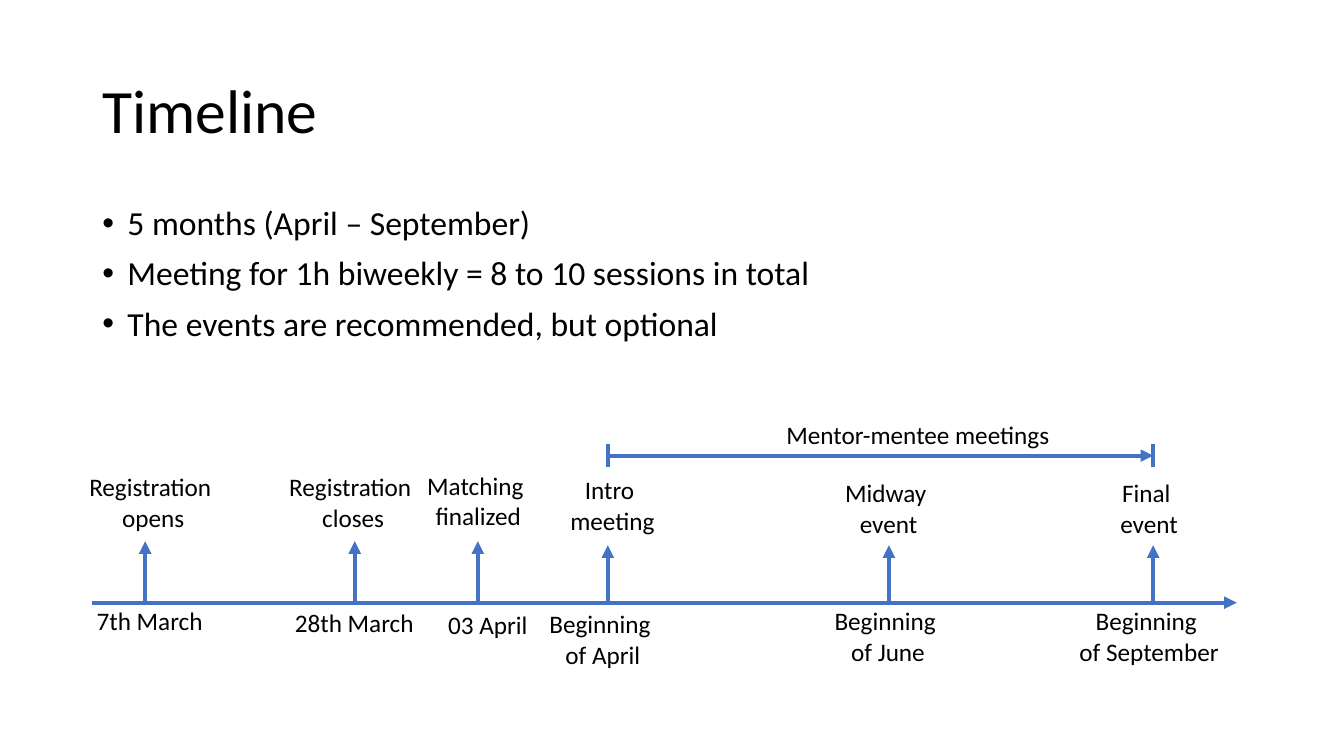
from collections import namedtuple
from lxml import etree
from pptx import Presentation
from pptx import util as u
from pptx.dml.color import RGBColor
from pptx.enum import shapes, text
from pptx.oxml import ns

BLUE = RGBColor(0x44, 0x72, 0xC4)
BLACK = RGBColor(0, 0, 0)
Pt = u.Pt

AXIS_Y = 430.5
SPAN_Y = 325.5
LINE_H = 22
BULLETS = [
    "5 months (April – September)",
    "Meeting for 1h biweekly = 8 to 10 sessions in total",
    "The events are recommended, but optional",
]
Label = namedtuple("Label", "content centre top width")
Event = namedtuple("Event", "x tip name date")
EVENTS = [
    Event(103.7, 386.6, Label("Registration \nopens", 109.4, 333.4, 106.6),
          Label("7th March", 106.9, 429.1, 91.4)),
    Event(253.4, 386.6, Label("Registration\n closes", 250.2, 333.4, 103),
          Label("28th March", 253.1, 430.6, 100)),
    Event(341.3, 386.6, Label("Matching \nfinalized", 341.6, 332.6, 88.6),
          Label("03 April", 348.5, 432, 72)),
    Event(434.2, 389.5, Label("Intro \nmeeting", 437.4, 335.5, 75.6),
          Label("Beginning \nof April", 430.6, 431.3, 90.7)),
    Event(635, 389.5, Label("Midway \nevent", 634.7, 337.7, 77),
          Label("Beginning \nof June", 634.3, 429.1, 90.7)),
    Event(823.7, 389.5, Label("Final \nevent", 820.8, 337.7, 56.2),
          Label("Beginning \nof September", 820.8, 429.1, 115.2)),
]


class Deck:
    font = "Calibri"
    line_width = 3

    def __init__(self, prs):
        self.s = prs.slides.add_slide(prs.slide_layouts[5])

    def fill_text(self, tf, content, size, align, spacing=1.0, before=0):
        tf.text = content
        for p in tf.paragraphs:
            p.alignment = align
            p.line_spacing = spacing
            p.space_before = Pt(before)
            for r in p.runs:
                r.font.name = self.font
                r.font.size = Pt(size)
                r.font.color.rgb = BLACK

    def title(self, content, *box):
        sp = self.s.shapes.title
        sp.left, sp.top, sp.width, sp.height = map(Pt, box)
        tf = sp.text_frame
        tf.auto_size = text.MSO_AUTO_SIZE.NONE
        tf.vertical_anchor = text.MSO_ANCHOR.MIDDLE
        self.fill_text(tf, content, 44, text.PP_ALIGN.LEFT, 0.9)

    def bullets(self, items, *box):
        tf = self.s.shapes.add_textbox(*map(Pt, box)).text_frame
        tf.word_wrap = True
        self.fill_text(tf, "\n".join(items), 24, text.PP_ALIGN.LEFT, 0.9, 10)
        for p in tf.paragraphs:
            pPr = p._p.get_or_add_pPr()
            pPr.set("marL", str(Pt(18)))
            pPr.set("indent", str(Pt(-18)))
            etree.SubElement(pPr, ns.qn("a:buFont")).set("typeface", "Arial")
            etree.SubElement(pPr, ns.qn("a:buChar")).set("char", "•")

    def label(self, content, centre, top, width):
        height = 7.2 + LINE_H * len(content.split("\n"))
        sp = self.s.shapes.add_textbox(*map(Pt, (centre - width / 2, top, width, height)))
        tf = sp.text_frame
        tf.word_wrap = False
        tf.auto_size = text.MSO_AUTO_SIZE.SHAPE_TO_FIT_TEXT
        self.fill_text(tf, content, 18, text.PP_ALIGN.CENTER)

    def line(self, x1, y1, x2, y2, arrow=True):
        sp = self.s.shapes.add_connector(
            shapes.MSO_CONNECTOR.STRAIGHT, *map(Pt, (x1, y1, x2, y2)))
        sp.line.color.rgb = BLUE
        sp.line.width = Pt(self.line_width)
        spPr = sp._element.spPr
        if arrow:
            ln = spPr.get_or_add_ln()
            etree.SubElement(ln, ns.qn("a:tailEnd")).set("type", "triangle")
        etree.SubElement(spPr, ns.qn("a:effectLst"))


def main():
    prs = Presentation()
    prs.slide_width, prs.slide_height = Pt(960), Pt(540)
    deck = Deck(prs)
    deck.title("Timeline", 66, 28.8, 828, 104.4)
    deck.bullets(BULLETS, 66, 144, 828, 122.4)

    deck.line(66, AXIS_Y, 883.5, AXIS_Y)
    for event in EVENTS:
        deck.line(event.x, AXIS_Y, event.x, event.tip)
        deck.label(*event.name)
        deck.label(*event.date)

    start, end = EVENTS[3].x, EVENTS[-1].x
    deck.line(start, SPAN_Y, end, SPAN_Y)
    for x in (start, end):
        deck.line(x, SPAN_Y - 8.5, x, SPAN_Y + 8, arrow=False)
    deck.label("Mentor-mentee meetings", 655.6, 295.9, 211)
    prs.save("out.pptx")


if __name__ == "__main__":
    main()
